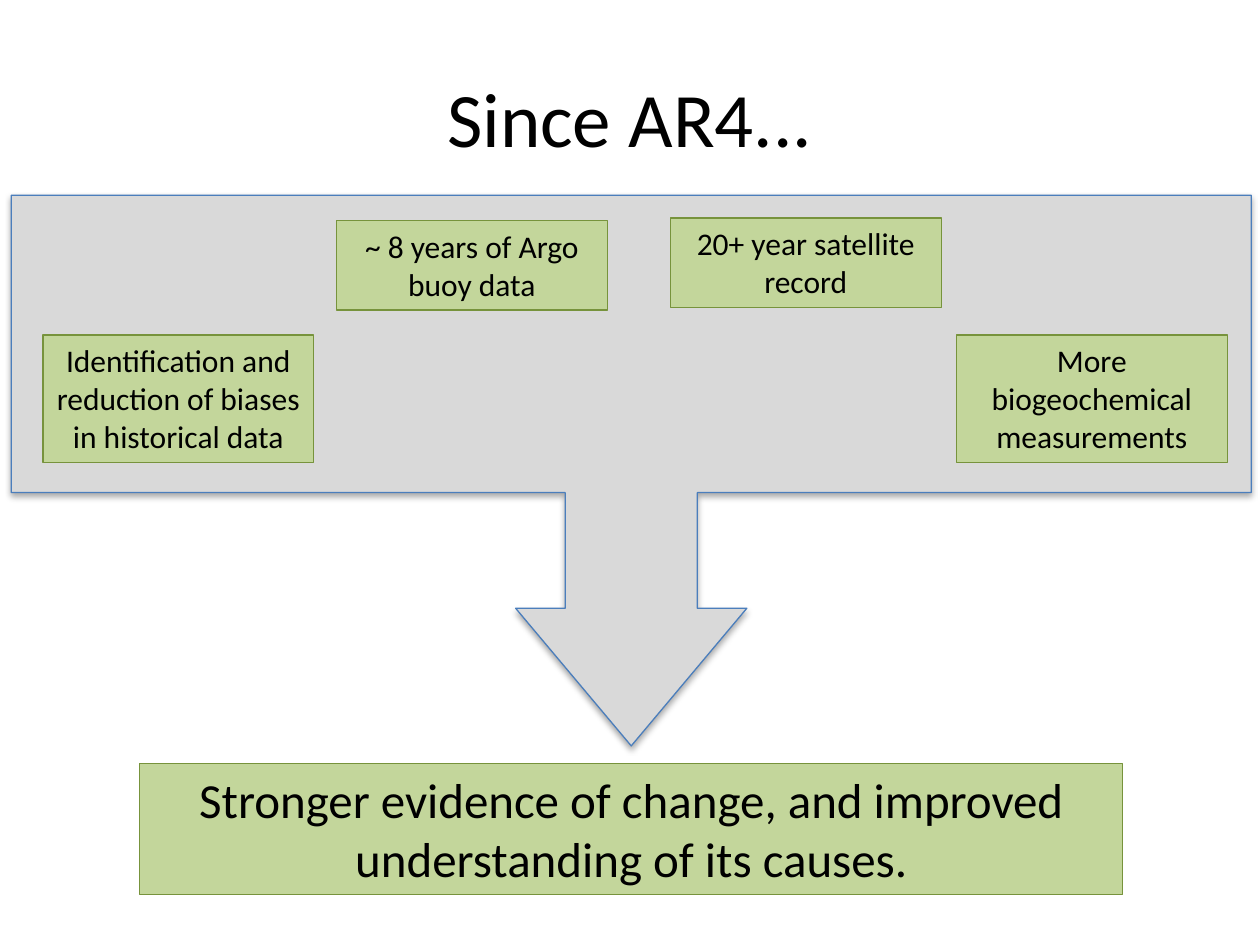
"""Build the slide on progress since AR4."""
from dataclasses import dataclass

from lxml import etree
from pptx import Presentation
from pptx.dml.color import RGBColor
from pptx.enum.shapes import MSO_SHAPE
from pptx.enum.text import MSO_ANCHOR, PP_ALIGN
from pptx.oxml.ns import qn
from pptx.util import Inches, Pt

RECT = MSO_SHAPE.RECTANGLE
ARROW = MSO_SHAPE.DOWN_ARROW_CALLOUT
TOP = MSO_ANCHOR.TOP
MIDDLE = MSO_ANCHOR.MIDDLE
CENTER = PP_ALIGN.CENTER


@dataclass(frozen=True)
class Theme:
    font: str = "Calibri"
    ink: str = "000000"
    green: str = "C3D69B"
    edge: str = "77933C"
    gray: str = "D9D9D9"
    blue: str = "4B7EBC"
    title: int = 44
    result: int = 28
    note: int = 18
    line: float = 0.75


class Page:
    def __init__(self, slide, theme):
        self.slide = slide
        self.theme = theme

    def label(self, shape, text, size, anchor):
        frame = shape.text_frame
        frame.word_wrap = True
        frame.vertical_anchor = anchor
        frame.text = text
        para = frame.paragraphs[0]
        para.alignment = CENTER
        font = para.runs[0].font
        font.name = self.theme.font
        font.size = Pt(size)
        font.color.rgb = RGBColor.from_string(self.theme.ink)

    def shape(self, kind, place, fill, line):
        shape = self.slide.shapes.add_shape(kind, *map(Inches, place))
        shape.shadow.inherit = False
        shape.fill.solid()
        shape.fill.fore_color.rgb = RGBColor.from_string(fill)
        shape.line.color.rgb = RGBColor.from_string(line)
        shape.line.width = Pt(self.theme.line)
        return shape

    def title(self, text, place):
        box = self.slide.shapes.add_textbox(*map(Inches, place))
        self.label(box, text, self.theme.title, MIDDLE)

    def box(self, text, place, size):
        box = self.shape(RECT, place, self.theme.green, self.theme.edge)
        self.label(box, text, size, TOP)

    def arrow(self, place, ratios):
        arrow = self.shape(ARROW, place, self.theme.gray, self.theme.blue)
        for i, ratio in enumerate(ratios):
            arrow.adjustments[i] = ratio
        self.shade(arrow)

    def shade(self, shape):
        effects = shape._element.spPr.find(qn("a:effectLst"))
        shadow = etree.SubElement(
            effects, qn("a:outerShdw"), blurRad=str(Pt(3.1)),
            dist=str(Pt(1.8)), dir="5400000", rotWithShape="0")
        color = etree.SubElement(shadow, qn("a:srgbClr"), val=self.theme.ink)
        etree.SubElement(color, qn("a:alpha"), val="35000")


def main():
    deck = Presentation()
    deck.slide_width, deck.slide_height = Inches(10), Inches(7.5)
    theme = Theme()
    page = Page(deck.slides.add_slide(deck.slide_layouts[6]), theme)

    page.arrow((0.09, 1.55, 9.84, 4.37), (0.24, 0.21, 0.25, 0.54))
    page.box("Stronger evidence of change, and improved understanding of its causes.",
             (1.11, 6.06, 7.8, 1.04), theme.result)
    page.title("Since AR4...", (0.5, 0.3, 9, 1.25))

    width, short, tall = 2.15, 0.71, 1.01
    notes = (
        ("~ 8 years of Argo buoy data", 2.67, 1.75, short),
        ("20+ year satellite record", 5.32, 1.73, short),
        ("More biogeochemical measurements", 7.59, 2.66, tall),
        ("Identification and reduction of biases in historical data", 0.34, 2.66, tall),
    )
    for text, left, top, height in notes:
        page.box(text, (left, top, width, height), theme.note)

    deck.save("out.pptx")


if __name__ == "__main__":
    main()
